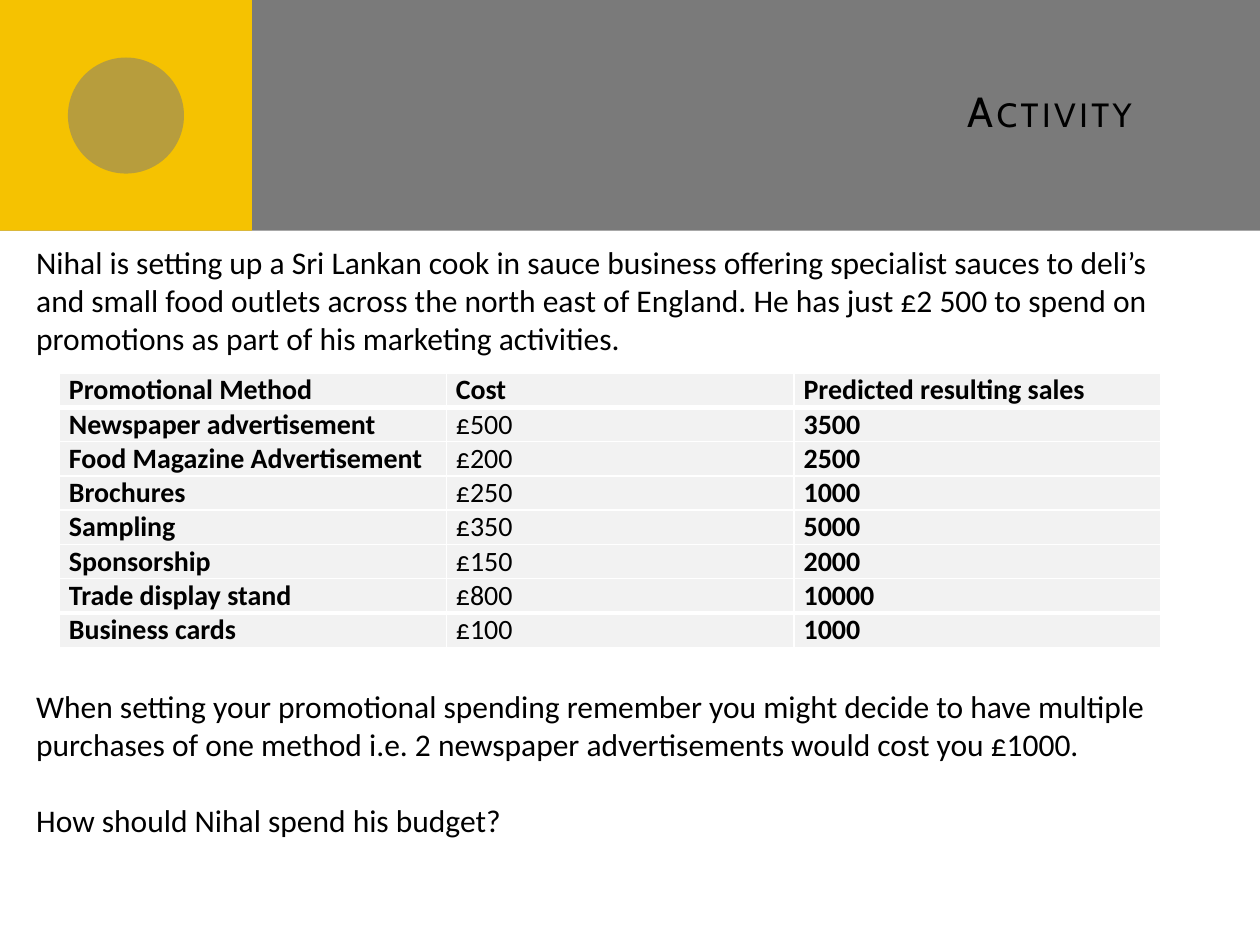
from lxml import etree
from pptx import Presentation
from pptx.dml.color import RGBColor
from pptx.enum.shapes import MSO_SHAPE
from pptx.enum.text import MSO_ANCHOR, MSO_AUTO_SIZE, PP_ALIGN
from pptx.oxml.ns import qn
from pptx.util import Cm, Pt

RECT, OVAL = MSO_SHAPE.RECTANGLE, MSO_SHAPE.OVAL
TOP, MIDDLE = MSO_ANCHOR.TOP, MSO_ANCHOR.MIDDLE
RIGHT = PP_ALIGN.RIGHT
FIXED = MSO_AUTO_SIZE.NONE
COLORS = {"gray": "7A7A7A", "gold": "F5C201", "pale": "F2F2F2",
          "white": "FFFFFF", "black": "000000"}
BODY = {"name": "Calibri", "size": Pt(18)}
HEAD = {"name": "Cabin", "size": Pt(24), "bold": False}
CELL = {"name": "Calibri", "size": Pt(16)}
INTRO = ["Nihal is setting up a Sri Lankan cook in sauce business offering "
         "specialist sauces to deli’s and small food outlets across the north "
         "east of England. He has just £2 500 to spend on promotions as part "
         "of his marketing activities."]
TASK = ["When setting your promotional spending remember you might decide to "
        "have multiple purchases of one method i.e. 2 newspaper "
        "advertisements would cost you £1000.",
        "How should Nihal spend his budget?"]
ROWS = [
    ("Promotional Method", "Cost", "Predicted resulting sales"),
    ("Newspaper advertisement", "£500", "3500"),
    ("Food Magazine Advertisement", "£200", "2500"),
    ("Brochures", "£250", "1000"),
    ("Sampling", "£350", "5000"),
    ("Sponsorship", "£150", "2000"),
    ("Trade display stand", "£800", "10000"),
    ("Business cards", "£100", "1000"),
]
WIDTHS = (7.8, 7.01, 7.39)


def color(key):
    return RGBColor.from_string(COLORS[key])


def style(font, values):
    for key, value in values.items():
        setattr(font, key, value)
    font.color.rgb = color("black")


def place(shape, box):
    for key, value in zip(("left", "top", "width", "height"), box):
        setattr(shape, key, Cm(value))


def add_block(slide, kind, box, fill, alpha=100):
    shape = slide.shapes.add_shape(kind, *map(Cm, box))
    shape.shadow.inherit = False
    shape.fill.solid()
    shape.fill.fore_color.rgb = color(fill)
    shape.line.fill.background()
    if alpha < 100:
        tint = shape.fill._xPr.find(".//" + qn("a:srgbClr"))
        etree.SubElement(tint, qn("a:alpha"), val=str(alpha * 1000))


def set_title(slide, text, box):
    title = slide.shapes.title
    place(title, box)
    frame = title.text_frame
    frame.text = text
    frame.auto_size = FIXED
    frame.vertical_anchor = MIDDLE
    frame.margin_right = Cm(0.74)
    par = frame.paragraphs[0]
    par.alignment = RIGHT
    run = par.runs[0]
    style(run.font, HEAD)
    props = run._r.get_or_add_rPr()
    props.set("cap", "small")
    props.set("spc", "200")
    slide.shapes._spTree.append(title._element)


def add_text(slide, lines, box, anchor=TOP, gap=0):
    frame = slide.shapes.add_textbox(*map(Cm, box)).text_frame
    frame.word_wrap = True
    frame.vertical_anchor = anchor
    for i, line in enumerate(lines):
        par = frame.add_paragraph() if i else frame.paragraphs[0]
        par.space_before = Pt(gap if i else 0)
        run = par.add_run()
        run.text = line
        style(run.font, BODY)


def add_edges(cell, weights):
    props = cell._tc.get_or_add_tcPr()
    for side, weight in weights.items():
        line = etree.SubElement(props, qn("a:ln" + side), w=str(Pt(weight)))
        fill = etree.SubElement(line, qn("a:solidFill"))
        etree.SubElement(fill, qn("a:srgbClr"), val=COLORS["white"])


def add_costs(slide, box):
    count = len(ROWS)
    table = slide.shapes.add_table(count, len(WIDTHS), *map(Cm, box)).table
    for col, width in zip(table.columns, WIDTHS):
        col.width = Cm(width)
    thick = (1, count - 1)
    for r, row in enumerate(ROWS):
        for c, text in enumerate(row):
            cell = table.cell(r, c)
            add_edges(cell, {"L": 1, "R": 1,
                             "T": 3 if r in thick else 1,
                             "B": 3 if r + 1 in thick else 1})
            cell.fill.solid()
            cell.fill.fore_color.rgb = color("pale")
            cell.margin_left = cell.margin_right = Cm(0.19)
            cell.margin_top = cell.margin_bottom = 0
            cell.text = text
            font = cell.text_frame.paragraphs[0].runs[0].font
            style(font, CELL)
            font.bold = r == 0 or c != 1


def main():
    deck = Presentation()
    deck.slide_width, deck.slide_height = Cm(25.4), Cm(19.05)
    slide = deck.slides.add_slide(deck.slide_layouts[5])
    add_block(slide, RECT, (0, 0, 25.4, 4.65), "gray")
    add_block(slide, RECT, (0, 0, 5.08, 4.65), "gold")
    add_block(slide, OVAL, (1.37, 1.16, 2.34, 2.34), "gray", 50)
    set_title(slide, "Activity", (6.78, 0.64, 17.35, 3.18))
    add_costs(slide, (1.2, 7.52, 22.2, 5.41))
    add_text(slide, TASK, (0.48, 13.72, 24.41, 3.33), MIDDLE, 22)
    add_text(slide, INTRO, (0.48, 4.78, 23.62, 2.57))
    deck.save("out.pptx")


if __name__ == "__main__":
    main()
